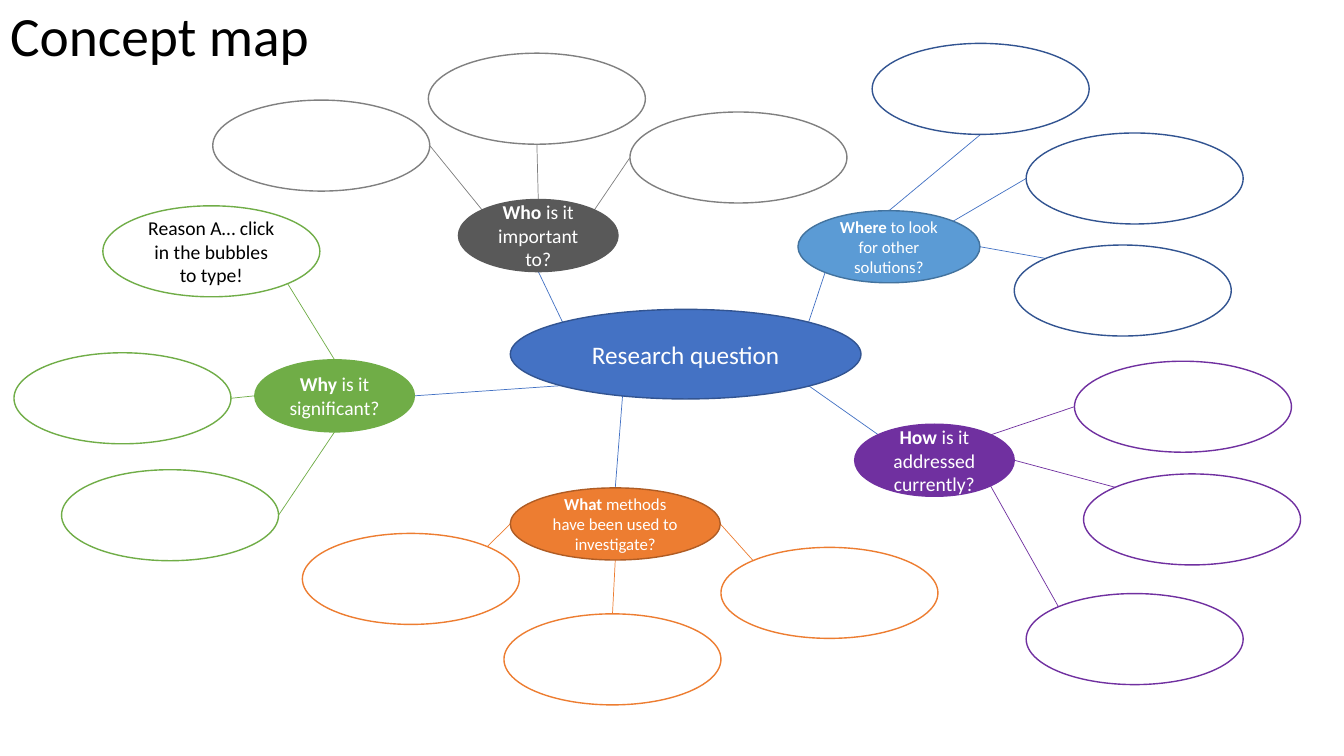
from dataclasses import dataclass

from lxml.etree import SubElement
from pptx import Presentation
from pptx.dml.color import RGBColor
from pptx.enum.shapes import MSO_CONNECTOR, MSO_SHAPE
from pptx.enum.text import MSO_ANCHOR, MSO_AUTO_SIZE, PP_ALIGN
from pptx.oxml.ns import qn
from pptx.util import Pt


@dataclass(frozen=True)
class Theme:
    font: str = "Calibri"
    black: str = "000000"
    white: str = "FFFFFF"
    blue: str = "4472C4"
    navy: str = "325491"
    title_size: float = 39.6
    question_size: int = 18
    large: int = 14
    small: int = 12
    outline: float = 1
    link: float = 0.5


THEME = Theme()
TITLE = "Concept map"
QUESTION = "Research question"
QUESTION_BOX = (364.5, 221, 250.5, 64)
HUB_HEIGHT = 51.5
BUBBLE_SIZE = (155, 65)

BRANCHES = [
    dict(lead="Where", rest=" to look for other solutions?", size=THEME.small,
         place=(570, 150.5), width=130, fill="5B9BD5", edge="43739E",
         bubble_edge=THEME.navy, link=THEME.blue, trunk=("top right", "bottom left"),
         bubbles=[(623, 31, "top", "bottom", ""),
                  (733, 95, "top right", "left", ""),
                  (724.5, 175, "right", "top left", "")]),
    dict(lead="How", rest=" is it addressed currently?", size=THEME.large,
         place=(610.5, 303), width=114, fill="7030A0", edge="7030A0",
         bubble_edge="7030A0", link="7030A0", trunk=("bottom right", "top left"),
         bubbles=[(767.5, 258, "top right", "left", ""),
                  (774, 338.5, "right", "top left", ""),
                  (733, 424, "bottom right", "top left", "")]),
    dict(lead="What", rest=" methods have been used to investigate?", size=THEME.small,
         place=(364.5, 348.5), width=150, fill="ED7D31", edge="AF5C24",
         bubble_edge="ED7D31", link="ED7D31", trunk=("inner", "top"),
         bubbles=[(216, 381, "left", "top right", ""),
                  (360, 438.5, "bottom", "top", ""),
                  (515, 391, "right", "top left", "")]),
    dict(lead="Who", rest=" is it important to?", size=THEME.large,
         place=(327.5, 142.5), width=114, fill="595959", edge="595959",
         bubble_edge="808080", link="808080", trunk=("top left", "bottom"),
         bubbles=[(152, 71.5, "top left", "right", ""),
                  (306, 38, "top", "bottom", ""),
                  (450, 80, "top right", "left", "")]),
    dict(lead="Why", rest=" is it significant?", size=THEME.large,
         place=(182, 257), width=114, fill="70AD47", edge="70AD47",
         bubble_edge="70AD47", link="70AD47", trunk=("bottom left", "right"),
         bubbles=[(73.5, 147, "top", "bottom right",
                   "Reason A… click in the bubbles to type!"),
                  (10, 252, "left", "right", ""),
                  (44, 335.5, "bottom", "right", "")]),
]

NEAR, FAR = 0.15, 0.85
SITES = {
    "top": (0.5, 0), "bottom": (0.5, 1), "left": (0, 0.5), "right": (1, 0.5),
    "top left": (NEAR, NEAR), "top right": (FAR, NEAR),
    "bottom left": (NEAR, FAR), "bottom right": (FAR, FAR),
    "inner": (0.33, 0.48),
}


def site_point(box, site):
    left, top, width, height = box
    across, down = SITES[site]
    return Pt(left + across * width), Pt(top + down * height)


def write(frame, text, lead="", size=THEME.large, color=THEME.black,
          align=PP_ALIGN.CENTER, spacing=None):
    frame.word_wrap = True
    frame.auto_size = MSO_AUTO_SIZE.NONE
    frame.vertical_anchor = MSO_ANCHOR.MIDDLE
    paragraph = frame.paragraphs[0]
    paragraph.alignment = align
    paragraph.line_spacing = spacing
    for words, bold in ((lead, True), (text, False)):
        if words:
            run = paragraph.add_run()
            run.text = words
            run.font.name = THEME.font
            run.font.size = Pt(size)
            run.font.bold = bold
            run.font.color.rgb = RGBColor.from_string(color)


def add_ellipse(slide, box, fill, edge):
    ellipse = slide.shapes.add_shape(MSO_SHAPE.OVAL, *map(Pt, box))
    ellipse.shadow.inherit = False
    ellipse.fill.solid()
    ellipse.fill.fore_color.rgb = RGBColor.from_string(fill)
    ellipse.line.color.rgb = RGBColor.from_string(edge)
    ellipse.line.width = Pt(THEME.outline)
    return ellipse.text_frame


def add_link(slide, start, end, color):
    link = slide.shapes.add_connector(MSO_CONNECTOR.STRAIGHT, *start, *end)
    link.line.color.rgb = RGBColor.from_string(color)
    link.line.width = Pt(THEME.link)
    SubElement(link._element.spPr, qn("a:effectLst"))


def add_branch(slide, branch):
    hub_box = (*branch["place"], branch["width"], HUB_HEIGHT)
    question_site, hub_site = branch["trunk"]
    add_link(slide, site_point(QUESTION_BOX, question_site),
             site_point(hub_box, hub_site), THEME.blue)
    for left, top, start, end, note in branch["bubbles"]:
        bubble_box = (left, top, *BUBBLE_SIZE)
        add_link(slide, site_point(hub_box, start),
                 site_point(bubble_box, end), branch["link"])
        bubble = add_ellipse(slide, bubble_box, THEME.white, branch["bubble_edge"])
        write(bubble, note)
    hub = add_ellipse(slide, hub_box, branch["fill"], branch["edge"])
    write(hub, branch["rest"], lead=branch["lead"], size=branch["size"],
          color=THEME.white)


def main():
    deck = Presentation()
    deck.slide_width, deck.slide_height = Pt(960), Pt(540)
    slide = deck.slides.add_slide(deck.slide_layouts[5])
    title = slide.shapes.title
    title.left, title.top, title.width, title.height = map(Pt, (0, 8, 828, 39.5))
    write(title.text_frame, TITLE, size=THEME.title_size,
          align=PP_ALIGN.LEFT, spacing=0.9)
    for branch in BRANCHES:
        add_branch(slide, branch)
    question = add_ellipse(slide, QUESTION_BOX, THEME.blue, THEME.navy)
    write(question, QUESTION, size=THEME.question_size, color=THEME.white)
    deck.save("out.pptx")


if __name__ == "__main__":
    main()
